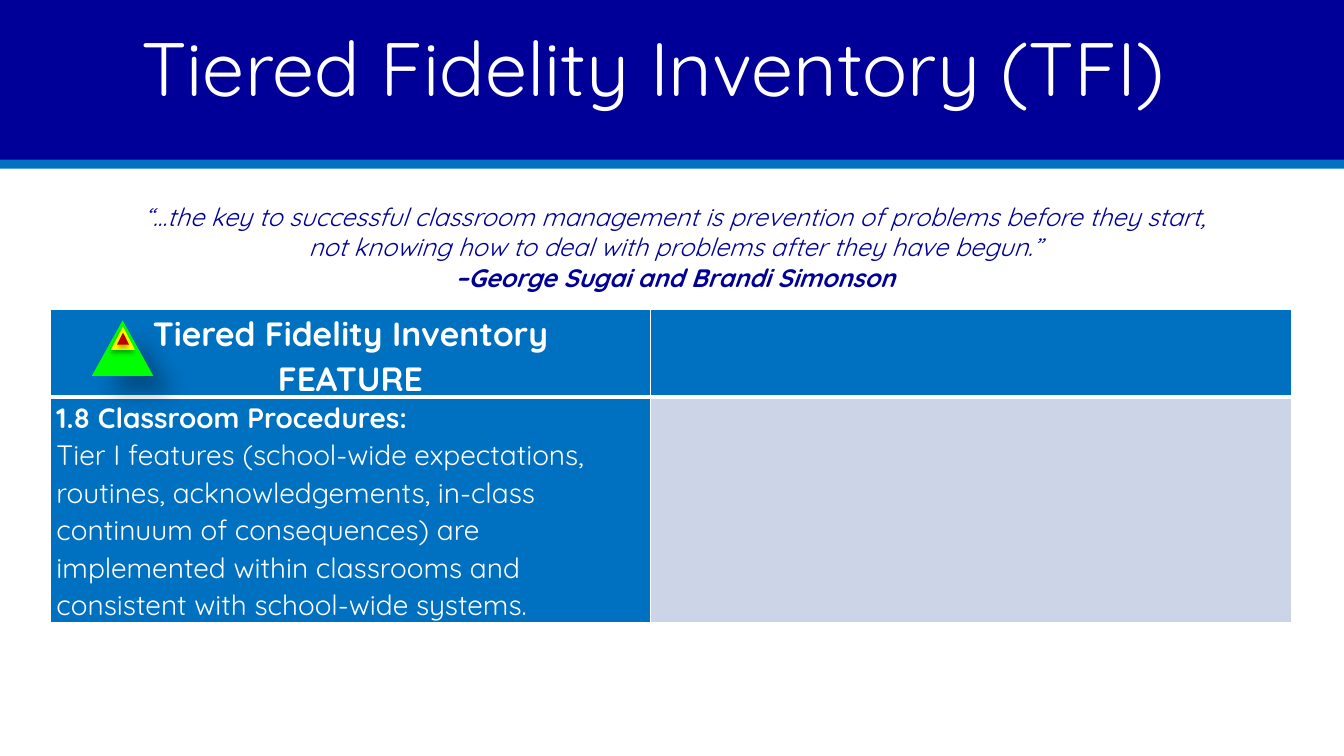
from dataclasses import dataclass

from lxml import etree
from pptx import Presentation
from pptx import util as u
from pptx.dml.color import RGBColor
from pptx.enum import shapes, text
from pptx.oxml import ns

WIDTH, HEIGHT = u.Inches(13.33), u.Inches(7.5)
FONT = "Quicksand"
COLORS = {"navy": "000099", "blue": "0070C0", "white": "FFFFFF", "pale": "CCD5E8",
          "green": "00FF00", "yellow": "FFFF00", "red": "C00000", "black": "000000"}
CENTER, LEFT = text.PP_ALIGN.CENTER, text.PP_ALIGN.LEFT
RECTANGLE = shapes.MSO_SHAPE.RECTANGLE
TRIANGLE = shapes.MSO_SHAPE.ISOSCELES_TRIANGLE


@dataclass
class Area:
    """Place and size as percentages of the slide's width and height."""
    left: float
    top: float
    width: float
    height: float

    def lengths(self) -> tuple:
        return (across(self.left), down(self.top), across(self.width), down(self.height))


@dataclass
class Shadow:
    opacity: int
    blur: float
    distance: float
    angle: int


@dataclass
class Figure:
    kind: int
    area: Area
    color: str
    shadow: Shadow | None = None


@dataclass
class Line:
    words: str
    size: int
    color: str = "white"
    bold: bool = False
    italic: bool = False
    align: int = CENTER
    spacing: float = 1.0


@dataclass
class Cell:
    row: int
    column: int
    fill: str
    lines: tuple = ()


def across(share: float) -> int:
    return round(WIDTH * share / 100)


def down(share: float) -> int:
    return round(HEIGHT * share / 100)


def rgb(name: str) -> RGBColor:
    return RGBColor.from_string(COLORS[name])


def add_color(parent, name: str):
    fill = etree.SubElement(parent, ns.qn("a:srgbClr"))
    fill.set("val", COLORS[name])
    return fill


def draw_figure(page, figure: Figure) -> None:
    shape = page.shapes.add_shape(figure.kind, *figure.area.lengths())
    shape.fill.solid()
    shape.fill.fore_color.rgb = rgb(figure.color)
    shape.line.fill.background()
    shape.shadow.inherit = False
    if figure.shadow:
        effects = shape._element.spPr.find(ns.qn("a:effectLst"))
        outer = etree.SubElement(effects, ns.qn("a:outerShdw"))
        outer.set("blurRad", str(u.Pt(figure.shadow.blur)))
        outer.set("dist", str(u.Pt(figure.shadow.distance)))
        outer.set("dir", str(figure.shadow.angle * 60000))
        outer.set("rotWithShape", "0")
        alpha = etree.SubElement(add_color(outer, "black"), ns.qn("a:alpha"))
        alpha.set("val", str(figure.shadow.opacity * 1000))


def write_lines(frame, lines: tuple) -> None:
    frame.text = "\n".join(line.words for line in lines)
    for para, line in zip(frame.paragraphs, lines):
        para.alignment, para.line_spacing = line.align, line.spacing
        for span in para.runs:
            span.font.name, span.font.size = FONT, u.Pt(line.size)
            span.font.bold, span.font.italic = line.bold, line.italic
            span.font.color.rgb = rgb(line.color)


def add_text(page, area: Area, lines: tuple, anchor: int) -> None:
    frame = page.shapes.add_textbox(*area.lengths()).text_frame
    frame.word_wrap = True
    frame.vertical_anchor = anchor
    write_lines(frame, lines)


def set_borders(cell, widths: dict) -> None:
    properties = cell._tc.get_or_add_tcPr()
    for index, (side, width) in enumerate(widths.items()):
        border = etree.Element(ns.qn(f"a:ln{side}"), w=str(u.Pt(width)))
        add_color(etree.SubElement(border, ns.qn("a:solidFill")), "white")
        properties.insert(index, border)


def add_grid(page, area: Area, columns: tuple, rows: tuple, cells: tuple) -> None:
    table = page.shapes.add_table(len(rows), len(columns), *area.lengths()).table
    for column, share in zip(table.columns, columns):
        column.width = across(share)
    for row, share in zip(table.rows, rows):
        row.height = down(share)
    for item in cells:
        cell = table.cell(item.row, item.column)
        cell.margin_left = cell.margin_right = u.Inches(0.06)
        cell.margin_top, cell.margin_bottom = u.Inches(0.01), 0
        cell.fill.solid()
        cell.fill.fore_color.rgb = rgb(item.fill)
        if item.lines:
            write_lines(cell.text_frame, item.lines)
        # The rule between header and body is the heavy one
        set_borders(cell, {"L": 1, "R": 1, "T": 3 if item.row == 1 else 1,
                           "B": 3 if item.row == 0 else 1})


BANNER = (Figure(RECTANGLE, Area(0, 0, 100, 20), "navy"),
          Figure(RECTANGLE, Area(0, 20, 100, 1.2), "navy"),
          Figure(RECTANGLE, Area(0, 21.1, 100, 1.2), "blue"))
SMALL_SHADOW = Shadow(32, 3.5, 2.2, 90)
TIERS = (Figure(TRIANGLE, Area(6.83, 42.4, 4.58, 7.33), "green", Shadow(30, 15, 18, 45)),
         Figure(TRIANGLE, Area(8.25, 43.2, 1.8, 3.07), "yellow", SMALL_SHADOW),
         Figure(TRIANGLE, Area(8.7, 44, 0.9, 1.6), "red", SMALL_SHADOW))
TITLE = (Line("Tiered Fidelity Inventory (TFI)", 54, spacing=0.9),)
QUOTE = (
    Line("“…the key to successful classroom management is prevention of problems "
         "before they start,", 18, "navy", italic=True),
    Line("not knowing how to deal with problems after they have begun.”",
         18, "navy", italic=True),
    Line("–George Sugai and Brandi Simonson", 18, "navy", bold=True, italic=True))
FEATURE = (Line("Tiered Fidelity Inventory", 24, bold=True, spacing=1.07),
           Line("FEATURE", 24, bold=True, spacing=1.07))
PROCEDURES = (
    Line("1.8 Classroom Procedures:", 20, bold=True, align=LEFT, spacing=1.07),
    Line("Tier I features (school-wide expectations, routines, acknowledgements, "
         "in-class continuum of consequences) are implemented within classrooms and "
         "consistent with school-wide systems.", 20, align=LEFT, spacing=1.07))
CELLS = (Cell(0, 0, "blue", FEATURE), Cell(0, 1, "blue"),
         Cell(1, 0, "blue", PROCEDURES), Cell(1, 1, "pale"))


def main() -> None:
    deck = Presentation()
    deck.slide_width, deck.slide_height = WIDTH, HEIGHT
    page = deck.slides.add_slide(deck.slide_layouts[6])

    # Banner and quotation
    for band in BANNER:
        draw_figure(page, band)
    add_text(page, Area(3.75, 26, 92.95, 13.47), QUOTE, text.MSO_ANCHOR.TOP)

    # Feature table with its tier triangle
    add_grid(page, Area(3.75, 40.93, 92.35, 41.2), (44.64, 47.71), (11.33, 29.87), CELLS)
    for tier in TIERS:
        draw_figure(page, tier)

    # Title
    add_text(page, Area(3.75, 0.53, 89.65, 15.07), TITLE, text.MSO_ANCHOR.BOTTOM)
    deck.save("out.pptx")


if __name__ == "__main__":
    main()
